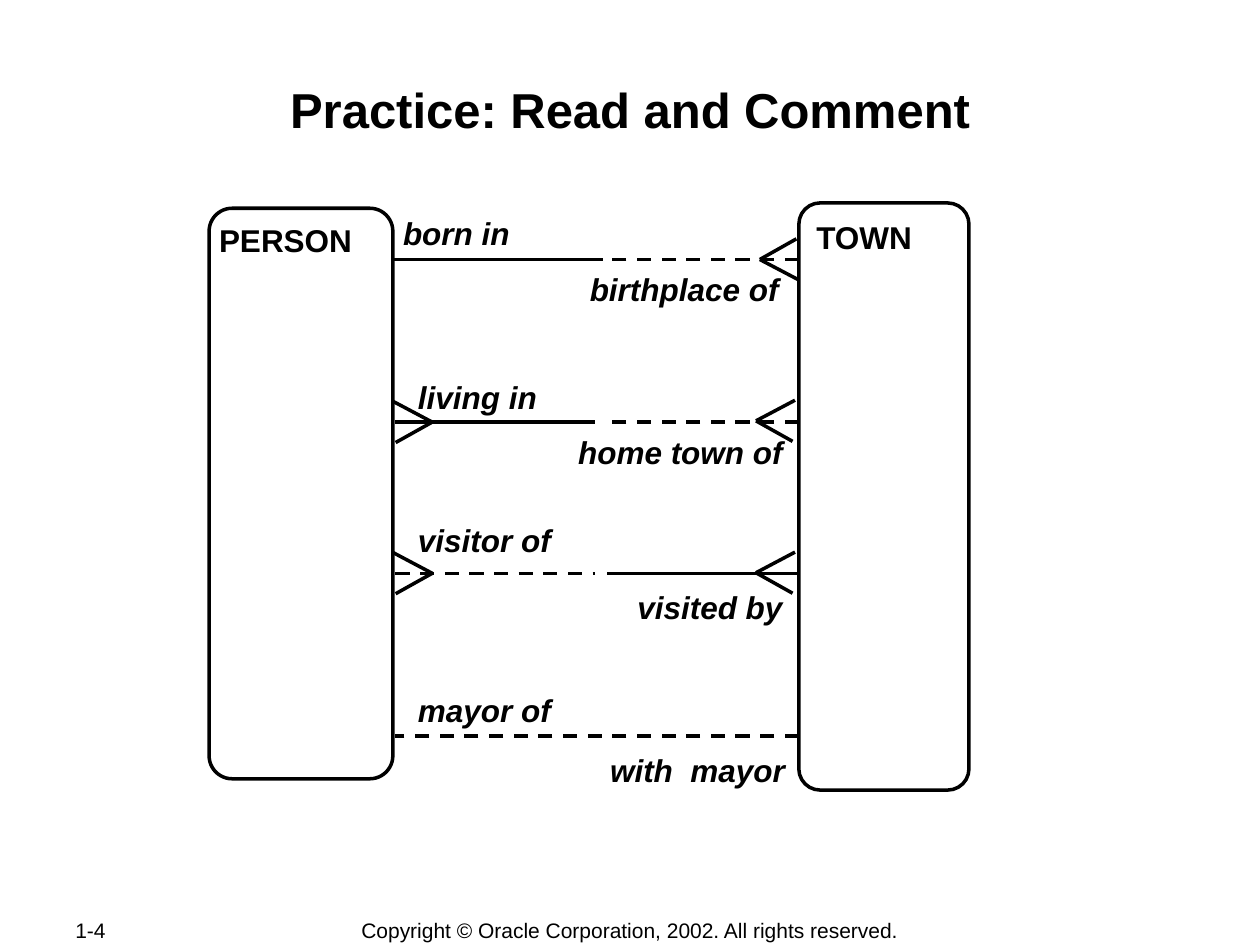
"""Build the entity relationship practice slide with PERSON and TOWN."""
from dataclasses import dataclass

from pptx import Presentation
from pptx.dml.color import RGBColor
from pptx.enum.dml import MSO_LINE
from pptx.enum.shapes import MSO_CONNECTOR, MSO_SHAPE
from pptx.enum.text import MSO_ANCHOR, PP_ALIGN
from pptx.oxml.xmlchemy import OxmlElement
from pptx.util import Pt

BLACK = RGBColor(0, 0, 0)
FONT = "Arial"
SOLID, DASH = MSO_LINE.SOLID, MSO_LINE.DASH
STRAIGHT = MSO_CONNECTOR.STRAIGHT
ROUNDED = MSO_SHAPE.ROUNDED_RECTANGLE
LEFT, CENTER, RIGHT = PP_ALIGN.LEFT, PP_ALIGN.CENTER, PP_ALIGN.RIGHT
TOP, MIDDLE = MSO_ANCHOR.TOP, MSO_ANCHOR.MIDDLE
LABEL_H = 28


@dataclass
class Entity:
    x: float
    y: float
    w: float
    h: float


@dataclass
class Label:
    text: str
    x: float
    y: float
    w: float
    h: float = LABEL_H
    align: PP_ALIGN = LEFT
    size: float = 18
    bold: bool = True
    italic: bool = True


@dataclass
class Line:
    x1: float
    x2: float
    y: float
    dash: MSO_LINE = SOLID


@dataclass
class CrowFoot:
    x: float
    y: float
    upper: float
    lower: float


ENTITIES = [Entity(456.5, 116, 97.2, 335.5), Entity(119.5, 119, 105, 326)]

LINES = [
    Line(344.5, 224.6, 148.3),
    Line(456.5, 347, 148.3, DASH),
    Line(226, 340, 241.2),
    Line(456.5, 347, 241.2, DASH),
    Line(226, 340, 327.6, DASH),
    Line(456.5, 347, 327.6),
    Line(456.5, 226, 420.5, DASH),
]

CROW_FEET = [
    CrowFoot(434.2, 148.3, 20.9, 22.3),
    CrowFoot(247, 241.2, -22.3, -20.9),
    CrowFoot(432, 240.5, 22.3, 20.9),
    CrowFoot(247, 327.6, -22.3, -20.9),
    CrowFoot(432, 327.3, 22.3, 20.9),
]

LABELS = [
    Label("TOWN", 459.4, 122.4, 91.4, italic=False),
    Label("PERSON", 118.1, 124.6, 105.8, italic=False),
    Label("born in", 223.2, 120.2, 106.6),
    Label("birthplace of", 310.3, 152.6, 141.8, align=RIGHT),
    Label("living in", 231.8, 213.8, 184.3),
    Label("home town of", 279.4, 245.5, 175, align=RIGHT),
    Label("visitor of", 231.8, 295.9, 184.3),
    Label("visited by", 307.4, 334.1, 146.9, align=RIGHT),
    Label("mayor of", 231.8, 393.1, 184.3),
    Label("with  mayor", 271.4, 427, 184.3, align=RIGHT),
]

FOOTERS = [
    Label("1-4", 36, 524.2, 76.3, 14.4, LEFT, 12, False, False),
    Label("Copyright © Oracle Corporation, 2002. All rights reserved.",
          191, 524.2, 338, 14.4, CENTER, 12, False, False),
]


def write(tf, label: Label, anchor: MSO_ANCHOR):
    tf.word_wrap = True
    tf.vertical_anchor = anchor
    p = tf.paragraphs[0]
    p.alignment = label.align
    r = p.add_run()
    r.text = label.text
    r.font.name = FONT
    r.font.size = Pt(label.size)
    r.font.bold = label.bold
    r.font.italic = label.italic
    r.font.color.rgb = BLACK
    return p


def place(sp, item) -> None:
    sp.left, sp.top = Pt(item.x), Pt(item.y)
    sp.width, sp.height = Pt(item.w), Pt(item.h)


def add_title(s, label: Label) -> None:
    sp = s.shapes.title
    place(sp, label)
    write(sp.text_frame, label, TOP)


def add_text(s, label: Label, anchor: MSO_ANCHOR):
    sp = s.shapes.add_textbox(0, 0, 0, 0)
    place(sp, label)
    return sp.text_frame, write(sp.text_frame, label, anchor)


def add_label(s, label: Label) -> None:
    p = add_text(s, label, TOP)[1]
    p.line_spacing = 0.95


def add_footer(s, label: Label) -> None:
    tf = add_text(s, label, MIDDLE)[0]
    tf.margin_top = tf.margin_bottom = 0


def add_entity(s, entity: Entity) -> None:
    sp = s.shapes.add_shape(ROUNDED, 0, 0, 0, 0)
    place(sp, entity)
    sp.adjustments[0] = 0.125
    sp.shadow.inherit = False
    sp.fill.background()
    sp.line.color.rgb = BLACK
    sp.line.width = Pt(2)


def add_line(s, x1: float, y1: float, x2: float, y2: float,
             dash: MSO_LINE = SOLID) -> None:
    sp = s.shapes.add_connector(STRAIGHT, Pt(x1), Pt(y1), Pt(x2), Pt(y2))
    sp.line.color.rgb = BLACK
    sp.line.width = Pt(2)
    sp.line.dash_style = dash
    sp._element.spPr.append(OxmlElement("a:effectLst"))


def add_crow_foot(s, foot: CrowFoot) -> None:
    add_line(s, foot.x + foot.upper, foot.y - 11.8, foot.x, foot.y)
    add_line(s, foot.x + foot.lower, foot.y + 11.7, foot.x, foot.y)


def main() -> None:
    prs = Presentation()
    prs.slide_width, prs.slide_height = Pt(720), Pt(540)
    s = prs.slides.add_slide(prs.slide_layouts[5])
    add_title(s, Label("Practice: Read and Comment", 72, 41.8, 576, 69,
                       CENTER, 28, italic=False))
    for entity in ENTITIES:
        add_entity(s, entity)
    for line in LINES:
        add_line(s, line.x1, line.y, line.x2, line.y, line.dash)
    for foot in CROW_FEET:
        add_crow_foot(s, foot)
    for label in LABELS:
        add_label(s, label)
    for footer in FOOTERS:
        add_footer(s, footer)
    prs.save("out.pptx")


if __name__ == "__main__":
    main()
